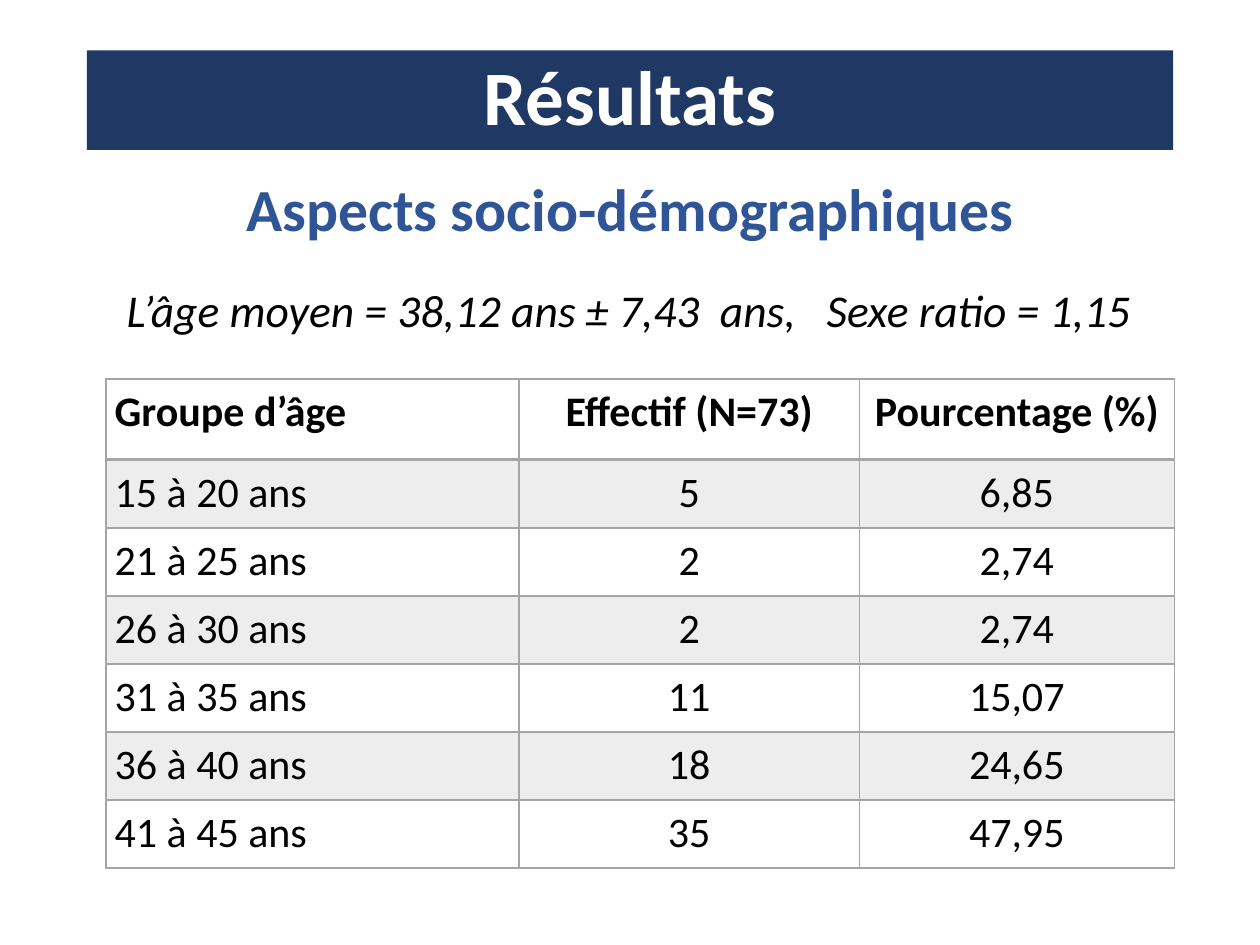
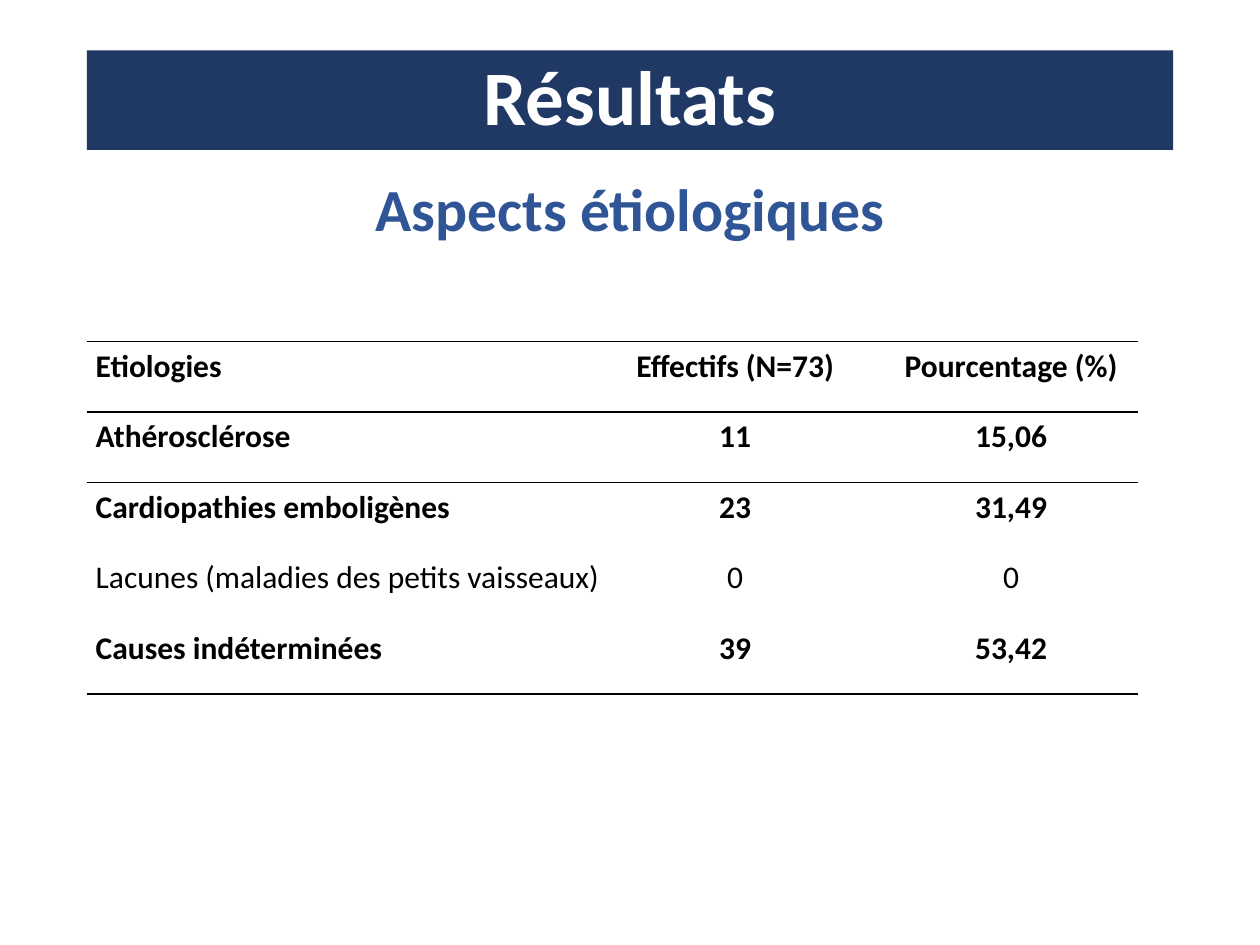
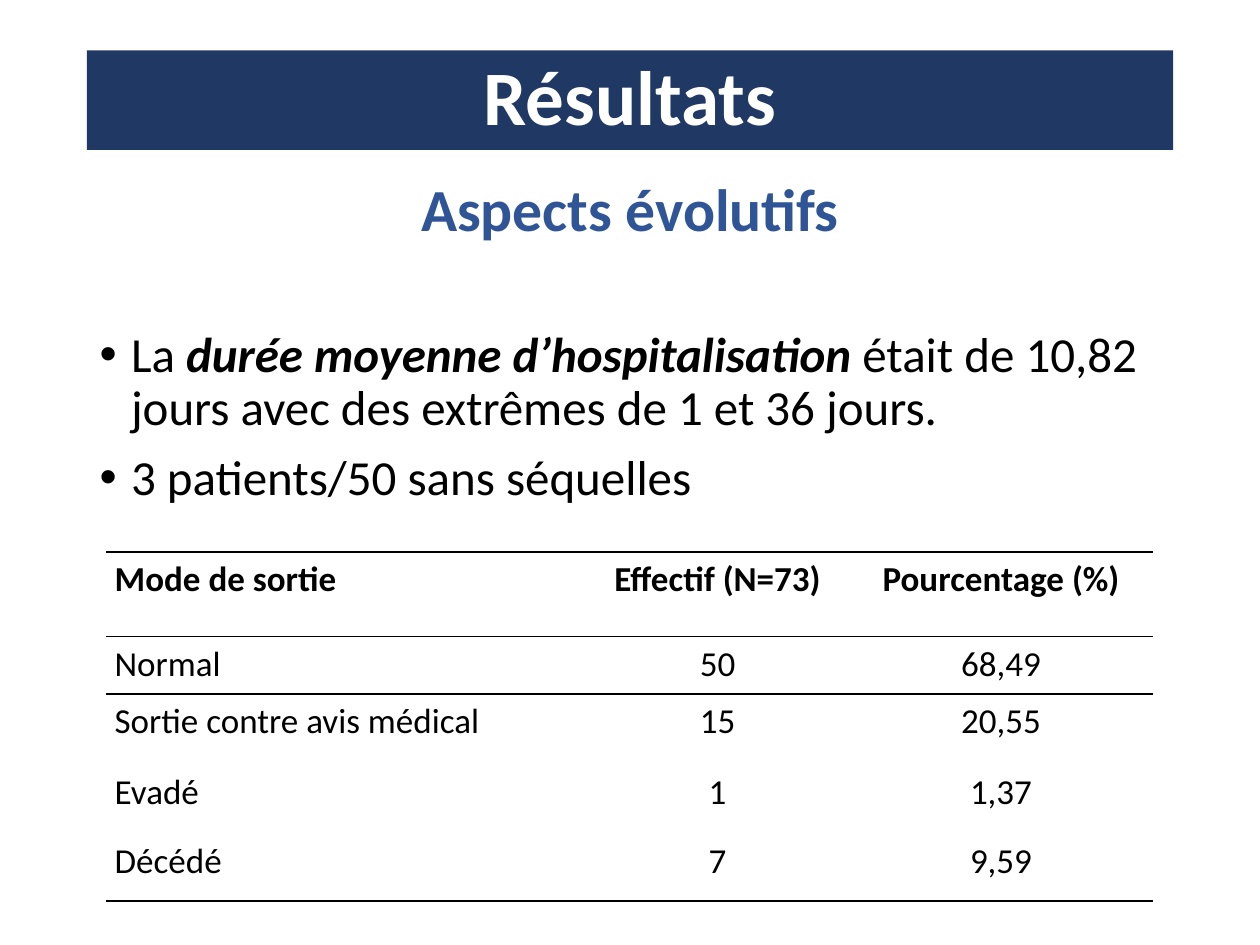
from lxml.etree import SubElement
from pptx import Presentation
from pptx.dml.color import RGBColor as RGB
from pptx.enum.text import MSO_ANCHOR as ANCHOR, MSO_AUTO_SIZE as FIT, PP_ALIGN as ALIGN
from pptx.oxml.ns import qn
from pptx.util import Inches, Pt

COLORS = {"band": "203864", "subtitle": "2F5597", "text": "000000", "white": "FFFFFF",
          "grid": "A5A5A5", "stripe": "EDEDED"}
FONT = "Calibri"
TITLE = "Résultats"
LEFT, WIDTH = 0.69, 8.62
NO_STYLE = "{2D5ABB26-0587-4C30-8999-92F81FD0307C}"
TITLE_ONLY, TITLE_BODY = 5, 1

SLIDES = [
    {"subtitle": "Aspects socio-démographiques",
     "note": "L’âge moyen = 38,12 ans ± 7,43  ans,   Sexe ratio = 1,15",
     "table": {
         "at": (0.84, 3.01), "cols": [3.28, 2.7, 2.5], "rows": [0.64] + [0.54] * 6,
         "size": 24, "bold": {0}, "grid": True,
         "data": [("Groupe d’âge", "Effectif (N=73)", "Pourcentage (%)"),
                  ("15 à 20 ans", "5", "6,85"),
                  ("21 à 25 ans", "2", "2,74"),
                  ("26 à 30 ans", "2", "2,74"),
                  ("31 à 35 ans", "11", "15,07"),
                  ("36 à 40 ans", "18", "24,65"),
                  ("41 à 45 ans", "35", "47,95")]}},
    {"subtitle": "Aspects étiologiques",
     "table": {
         "at": (LEFT, 2.71), "cols": [4.21, 1.87, 2.26], "rows": [0.56] * 5,
         "size": 18, "bold": {0, 1, 2, 4}, "last_indent": 0.25,
         "data": [("Etiologies", "Effectifs (N=73)", "Pourcentage (%)"),
                  ("Athérosclérose", "11", "15,06"),
                  ("Cardiopathies emboligènes", "23", "31,49"),
                  ("Lacunes (maladies des petits vaisseaux)", "0", "0"),
                  ("Causes indéterminées", "39", "53,42")]}},
    {"subtitle": "Aspects évolutifs",
     "bullets": [[("La ", {}),
                  ("durée moyenne d’hospitalisation ", {"bold": True, "italic": True}),
                  ("était de 10,82 jours avec des extrêmes de 1 et 36 jours.", {})],
                 [("3 patients/50 sans séquelles", {})]],
     "table": {
         "at": (0.84, 4.38), "cols": [3.81, 2.09, 2.41], "rows": [0.67, 0.46, 0.56, 0.55, 0.53],
         "size": 20, "bold": {0},
         "data": [("Mode de sortie", "Effectif (N=73)", "Pourcentage (%)"),
                  ("Normal", "50", "68,49"),
                  ("Sortie contre avis médical", "15", "20,55"),
                  ("Evadé", "1", "1,37"),
                  ("Décédé", "7", "9,59")]}},
]


def set_all(obj, **values):
    for name, value in values.items():
        setattr(obj, name, value)


def add_run(p, text, size, color="text", **fmt):
    r = p.add_run()
    r.text = text
    set_all(r.font, name=FONT, size=Pt(size), **{"bold": False, "italic": False, **fmt})
    r.font.color.rgb = RGB.from_string(COLORS[color])


def place(sp, left, top, width, height):
    set_all(sp, left=Inches(left), top=Inches(top), width=Inches(width), height=Inches(height))


def write_line(sp, text, size, color="text", spacing=1.0, anchor=ANCHOR.MIDDLE, **fmt):
    tf = sp.text_frame
    set_all(tf, word_wrap=True, auto_size=FIT.NONE, vertical_anchor=anchor)
    p = tf.paragraphs[0]
    set_all(p, alignment=ALIGN.CENTER, line_spacing=spacing)
    add_run(p, text, size, color, **fmt)


def add_heading(s, subtitle):
    title = s.shapes.title
    place(title, LEFT, 0.4, WIDTH, 0.79)
    title.fill.solid()
    title.fill.fore_color.rgb = RGB.from_string(COLORS["band"])
    write_line(title, TITLE, 44, "white", 0.9, bold=True)
    box = s.shapes.add_textbox(0, 0, 0, 0)
    place(box, LEFT, 1.44, WIDTH, 0.56)
    write_line(box, subtitle, 34.1, "subtitle", 0.7, bold=True)


def add_note(s, text):
    box = s.shapes.add_textbox(0, 0, 0, 0)
    place(box, 0.76, 2.19, 8.47, 0.54)
    write_line(box, text, 26, anchor=ANCHOR.TOP, italic=True)


def fill_body(s, bullets):
    body = s.placeholders[1]
    place(body, LEFT, 2, WIDTH, 4.76)
    tf = body.text_frame
    set_all(tf, word_wrap=True, auto_size=FIT.NONE, margin_top=Inches(0.62))
    for i, runs in enumerate(bullets):
        p = tf.add_paragraph() if i else tf.paragraphs[0]
        set_all(p, line_spacing=0.9, space_before=Pt(10))
        pPr = p._p.get_or_add_pPr()
        pPr.set("marL", str(Inches(0.25)))
        pPr.set("indent", str(-Inches(0.25)))
        for text, fmt in runs:
            add_run(p, text, 28, **fmt)


def borders(row, last, grid):
    if grid:
        return {"L": 1, "R": 1, "T": 2 if row == 1 else 1, "B": 2 if row == 0 else 1}
    sides = {}
    if row <= 1:
        sides["T"] = 1
    if row in (0, last):
        sides["B"] = 1
    return sides


def draw_borders(cell, sides, color):
    tcPr = cell._tc.get_or_add_tcPr()
    for side, width in sides.items():
        ln = SubElement(tcPr, qn("a:ln" + side), w=str(Pt(width)))
        SubElement(SubElement(ln, qn("a:solidFill")), qn("a:srgbClr"), val=COLORS[color])


def add_table(s, spec):
    data, cols, rows = spec["data"], spec["cols"], spec["rows"]
    grid = spec.get("grid", False)
    frame = s.shapes.add_table(len(rows), len(cols), *map(Inches, spec["at"]),
                               Inches(sum(cols)), Inches(sum(rows)))
    table = frame.table
    set_all(table, first_row=False, horz_banding=False)
    table._tbl.tblPr.find(qn("a:tableStyleId")).text = NO_STYLE
    for lane, size in zip(table.columns, cols):
        lane.width = Inches(size)
    for i, (height, values) in enumerate(zip(rows, data)):
        table.rows[i].height = Inches(height)
        for j, value in enumerate(values):
            cell = table.cell(i, j)
            set_all(cell, margin_left=Inches(0.07), margin_right=Inches(0.07),
                    margin_top=0, margin_bottom=0)
            draw_borders(cell, borders(i, len(rows) - 1, grid), "grid" if grid else "text")
            cell.fill.solid()
            shade = "stripe" if grid and i % 2 else "white"
            cell.fill.fore_color.rgb = RGB.from_string(COLORS[shade])
            p = cell.text_frame.paragraphs[0]
            set_all(p, alignment=ALIGN.CENTER if j else ALIGN.JUSTIFY, line_spacing=1.15)
            if j == len(cols) - 1 and "last_indent" in spec:
                p._p.get_or_add_pPr().set("marL", str(Inches(spec["last_indent"])))
            add_run(p, value, spec["size"], bold=i in spec["bold"])


def main():
    prs = Presentation()
    set_all(prs, slide_width=Inches(10), slide_height=Inches(7.5))
    for content in SLIDES:
        layout = TITLE_BODY if "bullets" in content else TITLE_ONLY
        s = prs.slides.add_slide(prs.slide_layouts[layout])
        add_heading(s, content["subtitle"])
        if "note" in content:
            add_note(s, content["note"])
        if "bullets" in content:
            fill_body(s, content["bullets"])
        add_table(s, content["table"])
    prs.save("out.pptx")


if __name__ == "__main__":
    main()
